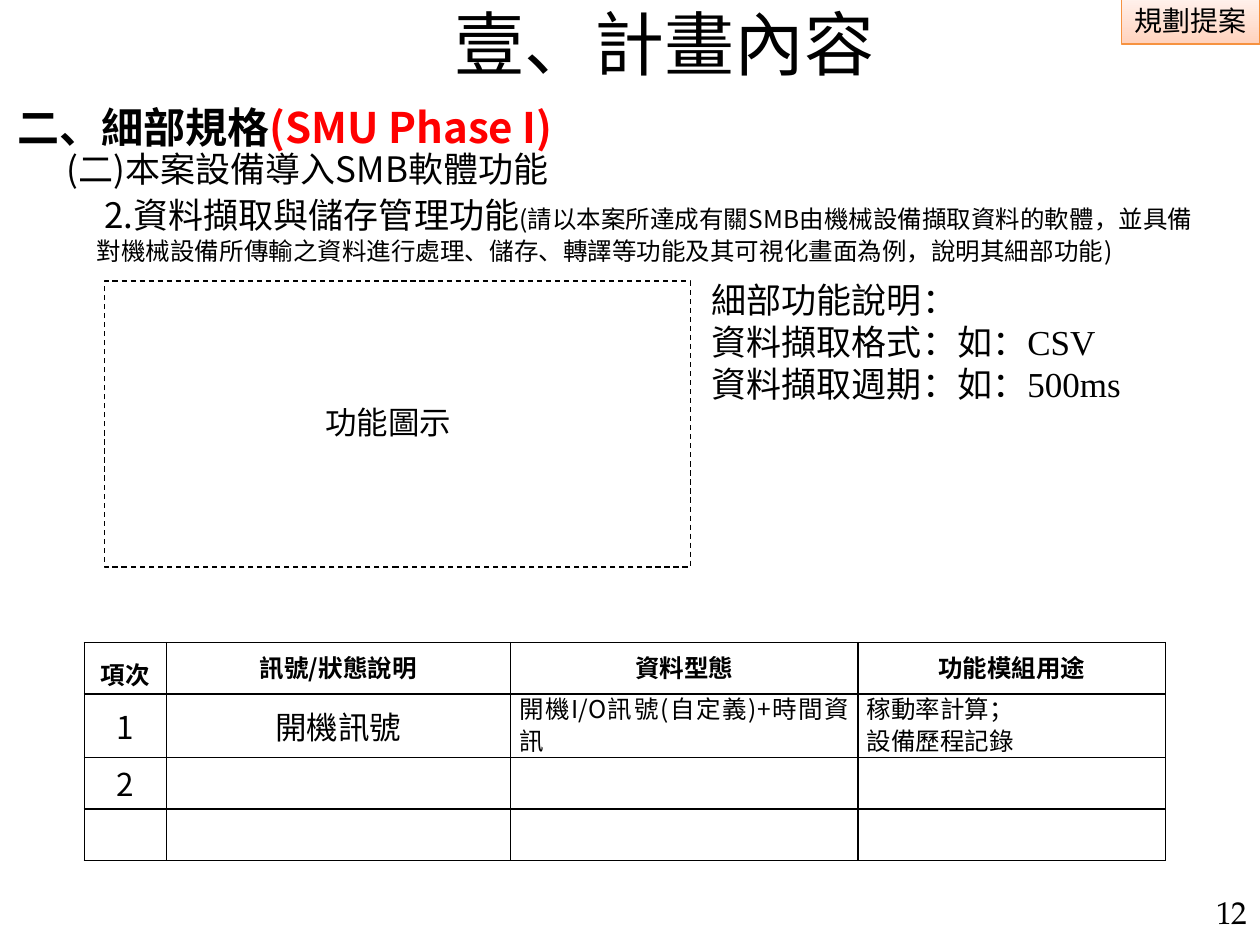
import pptx
import pptx.util
import pptx.dml.color
import pptx.enum.dml
import pptx.enum.shapes
import pptx.enum.text
import pptx.oxml
import pptx.oxml.ns

Inches, Pt = pptx.util.Inches, pptx.util.Pt
RGB = pptx.dml.color.RGBColor
ALIGN, ANCHOR = pptx.enum.text.PP_ALIGN, pptx.enum.text.MSO_ANCHOR
RECT = pptx.enum.shapes.MSO_SHAPE.RECTANGLE
SANS, SERIF, PAGE = "Noto Sans CJK SC", "Times New Roman", "TeX Gyre Pagella"
HUES = {"ink": "000000", "red": "FF0000", "paper": "FFFFFF", "edge": "F69240",
        "deep": "FFD2BD", "pale": "FFF2ED"}


def style(run, size, bold=False, hue="ink", face=SANS):
    font = run.font
    font.size, font.bold, font.name = Pt(size), bold, face
    font.color.rgb = RGB.from_string(HUES[hue])
    # East Asian face follows the Latin one, except for the Latin-only faces
    east = pptx.oxml.parse_xml(
        f'<a:ea {pptx.oxml.ns.nsdecls("a")} typeface="{SANS}"/>')
    run._r.get_or_add_rPr().find(pptx.oxml.ns.qn("a:latin")).addnext(east)


def write(frame, paras, align=ALIGN.LEFT, space=None):
    """Each paragraph is a list of (text, style options) pairs."""
    for i, parts in enumerate(paras):
        para = frame.paragraphs[0] if i == 0 else frame.add_paragraph()
        para.alignment = align
        if space:
            para.line_spacing = Pt(space)
        for text, look in parts:
            run = para.add_run()
            run.text = text
            style(run, **look)


def add_text(slide, box, paras, align=ALIGN.LEFT, space=None, anchor=ANCHOR.TOP):
    frame = slide.shapes.add_textbox(*map(Inches, box)).text_frame
    frame.word_wrap = True
    frame.vertical_anchor = anchor
    write(frame, paras, align, space)
    return frame


def add_rect(shapes, box, line=None):
    rect = shapes.add_shape(RECT, *map(Inches, box))
    rect.shadow.inherit = False
    rect.fill.solid()
    rect.fill.fore_color.rgb = RGB.from_string(HUES["paper"])
    if line:
        rect.line.color.rgb = RGB.from_string(HUES[line])
        rect.line.width = Pt(0.75)
    else:
        rect.line.fill.background()
    return rect


def add_tag(slide, box):
    tag = add_rect(slide.shapes, box, "edge")
    tag.fill.gradient()
    tag.fill.gradient_angle = 90
    for stop, hue in zip(tag.fill.gradient_stops, ("deep", "pale")):
        stop.color.rgb = RGB.from_string(HUES[hue])
    tag.text_frame.word_wrap = False
    write(tag.text_frame, [[("規劃提案", {"size": 16})]], ALIGN.CENTER)


def add_title(slide, box):
    title = slide.shapes.title
    title.left, title.top, title.width, title.height = map(Inches, box)
    frame = title.text_frame
    frame.auto_size = pptx.enum.text.MSO_AUTO_SIZE.NONE
    frame.vertical_anchor = ANCHOR.MIDDLE
    write(frame, [[("壹、計畫內容", {"size": 40})]], ALIGN.CENTER)


def add_figure(slide, box):
    left, top, width, height = box
    group = slide.shapes.add_group_shape()
    frame = add_rect(group.shapes, box, "ink")
    frame.line.dash_style = pptx.enum.dml.MSO_LINE.DASH
    label = add_rect(group.shapes, (left + 1.1, top + 0.86, 2.3, 0.85))
    label.text_frame.vertical_anchor = ANCHOR.TOP
    write(label.text_frame, [[("功能圖示", {"size": 18})]], ALIGN.CENTER, 26)


def add_border(cell):
    props = cell._tc.get_or_add_tcPr()
    for i, side in enumerate(("lnL", "lnR", "lnT", "lnB")):
        props.insert(i, pptx.oxml.parse_xml(
            f'<a:{side} {pptx.oxml.ns.nsdecls("a")} w="12700"><a:solidFill>'
            f'<a:srgbClr val="{HUES["ink"]}"/></a:solidFill></a:{side}>'))


def add_grid(slide, box):
    wides, highs = (0.65, 2.73, 2.76, 2.44), (0.41, 0.5, 0.41, 0.41)
    head = {"size": 14, "bold": True}
    big, small = {"size": 18}, {"size": 14}
    mid, just = ALIGN.CENTER, ALIGN.JUSTIFY
    # (lines, look, alignment, line spacing) by row and column
    cells = {
        (0, 0): (["項次"], head, mid, 26),
        (0, 1): (["訊號/狀態說明"], head, mid, 18),
        (0, 2): (["資料型態"], head, mid, 18),
        (0, 3): (["功能模組用途"], head, mid, 18),
        (1, 0): (["1"], big, mid, None),
        (1, 1): (["開機訊號"], big, mid, None),
        (1, 2): (["開機I/O訊號(自定義)+時間資訊"], small, just, 18),
        (1, 3): (["稼動率計算；", "設備歷程記錄"], small, just, 18),
        (2, 0): (["2"], big, mid, 26),
    }
    table = slide.shapes.add_table(len(highs), len(wides), *map(Inches, box)).table
    table.first_row = table.horz_banding = False
    for col, wide in zip(table.columns, wides):
        col.width = Inches(wide)
    for r, high in enumerate(highs):
        table.rows[r].height = Inches(high)
        for c in range(len(wides)):
            cell = table.cell(r, c)
            cell.margin_left = cell.margin_right = Inches(0.07)
            cell.margin_top = cell.margin_bottom = 0
            cell.vertical_anchor = ANCHOR.MIDDLE
            cell.fill.background()
            add_border(cell)
            if (r, c) in cells:
                lines, look, align, space = cells[r, c]
                write(cell.text_frame, [[(line, look)] for line in lines], align, space)


def main():
    deck = pptx.Presentation()
    deck.slide_width, deck.slide_height = Inches(10), Inches(7.5)
    slide = deck.slides.add_slide(deck.slide_layouts[5])
    body = {"size": 20}
    latin = {"size": 20, "face": SERIF}

    # Header
    add_tag(slide, (8.9, -0.02, 1.1, 0.37))
    add_title(slide, (1.93, 0, 6.69, 0.68))

    # Headings
    add_text(slide, (0.04, 0.76, 9.61, 0.63), [[
        ("二、細部規格", {"size": 24, "bold": True}),
        ("(SMU Phase I)", {"size": 24, "bold": True, "hue": "red"})]])
    add_text(slide, (0.43, 1.12, 8.19, 0.44), [[("(二)本案設備導入SMB軟體功能", body)]])
    topic = add_text(slide, (0.67, 1.49, 8.98, 0.67), [[
        ("2.資料擷取與儲存管理功能", body),
        ("(請以本案所達成有關SMB由機械設備擷取資料的軟體，並具備對機械設備所傳輸之資料"
         "進行處理、儲存、轉譯等功能及其可視化畫面為例，說明其細部功能)", {"size": 14})]])
    topic.paragraphs[0]._p.get_or_add_pPr().set("indent", str(Inches(0.06)))

    # Figure and its notes
    add_figure(slide, (0.83, 2.23, 4.65, 2.27))
    add_text(slide, (5.55, 2.16, 4.02, 1.11), [
        [("細部功能說明：", body)],
        [("資料擷取格式：", body), ("如：CSV", latin)],
        [("資料擷取週期：", body), ("如：500ms", latin)]])

    # Signal table and page number
    add_grid(slide, (0.67, 5.1, 8.58, 1.73))
    add_text(slide, (9.14, 7.11, 0.86, 0.39), [[("12", {"size": 18, "face": PAGE})]],
             ALIGN.RIGHT, 12, ANCHOR.MIDDLE)
    deck.save("out.pptx")


if __name__ == "__main__":
    main()
